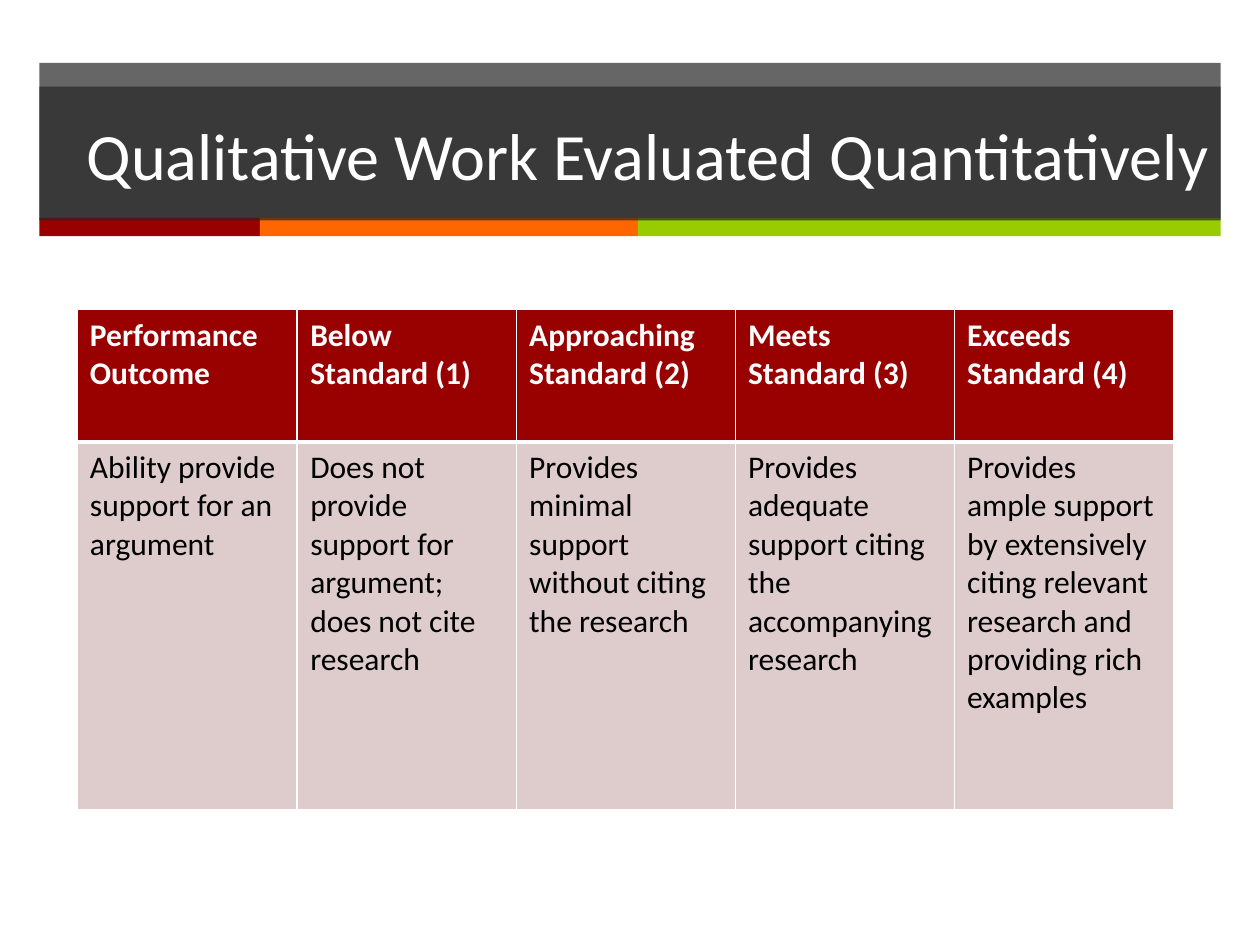
import pptx
import pptx.dml.color
import pptx.enum.shapes
import pptx.enum.text
import pptx.oxml
import pptx.oxml.ns
import pptx.util
from lxml import etree

Pt = pptx.util.Pt
COLORS = {"banner": "262626", "red": "990000", "orange": "FF6600",
          "green": "99CC00", "body": "DECCCC", "white": "FFFFFF",
          "black": "000000"}
FONT = "Calibri"
BANNER_LEFT, BANNER_WIDTH = 22.5, 675
STRIPES = [("red", 126), ("orange", 216), ("green", 333)]
COLUMN_WIDTH = 125.1
ROW_HEIGHTS = [75.6, 210.2]
RUBRIC = [
    ("Performance Outcome", "Ability provide support for an argument"),
    ("Below Standard (1)",
     "Does not provide support for argument; does not cite research"),
    ("Approaching Standard (2)",
     "Provides minimal support without citing the research"),
    ("Meets Standard (3)",
     "Provides adequate support citing the accompanying research"),
    ("Exceeds Standard (4)",
     "Provides ample support by extensively citing relevant research "
     "and providing rich examples"),
]


def rgb(name):
    return pptx.dml.color.RGBColor.from_string(COLORS[name])


def format_text(paragraph, size, color, bold=False):
    for run in paragraph.runs:
        run.font.name = FONT
        run.font.size = Pt(size)
        run.font.bold = bold
        run.font.color.rgb = rgb(color)


def add_bar(slide, left, top, width, height, color, opacity=100):
    bar = slide.shapes.add_shape(
        pptx.enum.shapes.MSO_SHAPE.RECTANGLE,
        Pt(left), Pt(top), Pt(width), Pt(height))
    bar.shadow.inherit = False
    bar.line.fill.background()
    bar.fill.solid()
    bar.fill.fore_color.rgb = rgb(color)
    if opacity < 100:
        tint = next(bar.fill._xPr.iter(pptx.oxml.ns.qn("a:srgbClr")))
        etree.SubElement(tint, pptx.oxml.ns.qn("a:alpha"),
                         val=str(opacity * 1000))
    return bar


def add_title(slide, wording):
    title = add_bar(slide, BANNER_LEFT, 49.5, BANNER_WIDTH, 76.5, "banner", 70)
    frame = title.text_frame
    frame.word_wrap = True
    frame.vertical_anchor = pptx.enum.text.MSO_ANCHOR.MIDDLE
    frame.text = wording
    frame.paragraphs[0].alignment = pptx.enum.text.PP_ALIGN.RIGHT
    format_text(frame.paragraphs[0], 37.8, "white")


def set_borders(cell, widths):
    properties = cell._tc.get_or_add_tcPr()
    for side, width in widths.items():
        properties.append(pptx.oxml.parse_xml(
            f'<a:ln{side} {pptx.oxml.ns.nsdecls("a")} w="{Pt(width)}">'
            f'<a:solidFill><a:srgbClr val="{COLORS["white"]}"/></a:solidFill>'
            f'</a:ln{side}>'))


def add_rubric(slide, left, levels):
    rubric = slide.shapes.add_table(
        2, len(levels), Pt(left), Pt(177), Pt(COLUMN_WIDTH * len(levels)),
        Pt(sum(ROW_HEIGHTS))).table
    for row, height in zip(rubric.rows, ROW_HEIGHTS):
        row.height = Pt(height)
    # Header and body differ in fill, text colour, weight and border widths
    row_styles = [("red", "white", True, {"L": 1, "R": 1, "T": 1, "B": 3}),
                  ("body", "black", False, {"L": 1, "R": 1, "T": 3, "B": 1})]
    for column, wordings in enumerate(levels):
        rubric.columns[column].width = Pt(COLUMN_WIDTH)
        for row, (fill, color, bold, borders) in enumerate(row_styles):
            cell = rubric.cell(row, column)
            set_borders(cell, borders)
            cell.fill.solid()
            cell.fill.fore_color.rgb = rgb(fill)
            cell.text_frame.text = wordings[row]
            format_text(cell.text_frame.paragraphs[0], 18, color, bold)


def main():
    deck = pptx.Presentation()
    deck.slide_width, deck.slide_height = Pt(720), Pt(540)
    slide = deck.slides.add_slide(deck.slide_layouts[6])

    # Banner with its coloured stripes
    add_bar(slide, BANNER_LEFT, 36, BANNER_WIDTH, 89, "banner", 70)
    stripe_left = BANNER_LEFT
    for color, width in STRIPES:
        add_bar(slide, stripe_left, 124.5, width, 10.5, color)
        stripe_left += width
    add_title(slide, "Qualitative Work Evaluated Quantitatively")

    # Full rubric, then its outcome column laid on top
    add_rubric(slide, 45, RUBRIC)
    add_rubric(slide, 44.2, RUBRIC[:1])

    deck.save("out.pptx")


if __name__ == "__main__":
    main()
